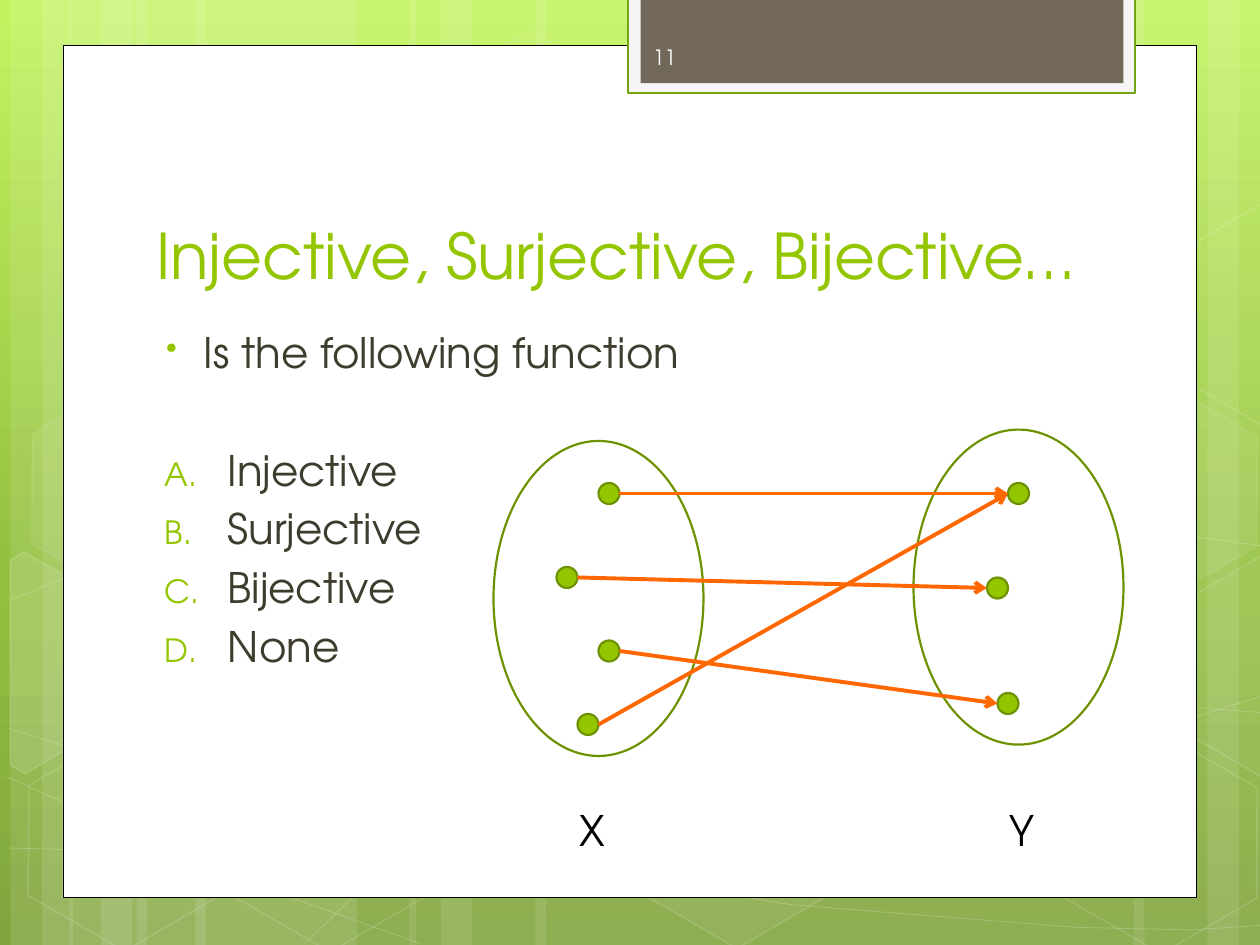
from copy import deepcopy
from dataclasses import dataclass

from pptx import Presentation
from pptx.dml.color import RGBColor
from pptx.enum.shapes import MSO_CONNECTOR as Connector, MSO_SHAPE as Shape
from pptx.enum.text import MSO_ANCHOR as Anchor, PP_ALIGN as Align
from pptx.oxml.ns import qn
from pptx.oxml.xmlchemy import OxmlElement as new_element
from pptx.util import Pt


@dataclass(frozen=True)
class Theme:
    """Colours, font and type sizes."""
    font: str = "TeX Gyre Adventor"
    green: str = "94C600"
    outline: str = "6D9200"
    orange: str = "FF6700"
    white: str = "FFFFFF"
    black: str = "000000"
    ink: str = "3E3D2D"
    tab: str = "71685A"
    tab_edge: str = "F5F5F5"
    tab_line: str = "74A510"
    number: str = "FEFEFE"
    backdrop: tuple = ((0, "C3F35F"), (0.62, "93BF3F"), (1, "81A53E"))
    title_size: int = 36
    body_size: int = 24
    number_size: int = 12


THEME = Theme()
DOT = 12
STRIPES = [(78, 126), (6, 36), (24, 60), (111.6, 126), (39.6, 36), (57.6, 60),
           (528, 126), (690, 36), (648, 60), (306, 222), (234, 36), (252, 60)]
WAVES = [
    [(5, 484.6), (136.8, 488.2), (329.8, 478.8), (570.2, 444.2), (725, 396.7)],
    [(5, 343.4), (87.1, 310.3), (249.8, 278.6), (470.9, 278.6), (725, 312.5)],
    [(4.3, 444.2), (131.6, 500.6), (240.5, 539.3)],
    [(5, 416.2), (92.2, 443.5), (257, 484.6), (452.2, 517), (614.2, 529.9), (680.4, 531.4), (725, 528.5)],
    [(174.2, 539.3), (217.4, 497.5), (279.4, 460.1), (338.4, 438.5), (437.8, 416.2),
     (489.6, 409.7), (571.7, 404.6), (686.2, 404.6), (724.3, 407.5)],
]
HEXAGONS = [(240.5, 26, 4, 8), (358, 424, 6, 12), (8, 425.5, None, 12), (10, 224.5, 7, 8),
            (125.5, 426, None, 12), (600.5, 427, None, 12), (600.5, 226, 7, 8)]
LEFT_CUT = [(5.8, 320.4), (13.7, 315.4), (69.1, 347), (68.4, 410.4), (14.4, 442.1), (5.8, 437)]
RIGHT_CUT = [(666.7, 349.2), (720.7, 317.5), (726.5, 321.1), (726.5, 441.4), (721.4, 444.2), (666.7, 412.6)]
DOMAIN = [(342, 276), (318, 324), (342, 366), (330, 408)]
CODOMAIN = [(576, 276), (564, 330), (570, 396)]
MAPPING = [0, 1, 2, 0]


def add_child(parent, tag, **attributes):
    """Append a DrawingML element with the given attributes."""
    child = new_element(tag)
    for name, value in attributes.items():
        child.set(name, str(value))
    parent.append(child)
    return child


def style(shape, fill=None, fill_alpha=None, line=None, weight=1.25, line_alpha=None):
    """Set fill, outline and their opacity in percent."""
    shape.shadow.inherit = False
    properties = shape._element.spPr
    for paint, colour in ((shape.fill, fill), (shape.line.fill, line)):
        if colour:
            paint.solid()
            paint.fore_color.rgb = RGBColor.from_string(colour)
        else:
            paint.background()
    if line:
        shape.line.width = Pt(weight)
    for owner, alpha in ((properties, fill_alpha), (properties.find(qn("a:ln")), line_alpha)):
        if alpha:
            add_child(owner.find(qn("a:solidFill"))[0], "a:alpha", val=alpha * 1000)


def draw(page, kind, left, top, width, height, **look):
    """Add a styled preset shape."""
    shape = page.shapes.add_shape(kind, Pt(left), Pt(top), Pt(width), Pt(height))
    style(shape, **look)
    return shape


def outline(page, points, close, **look):
    """Add a styled freeform through the points."""
    start, *rest = [(Pt(x), Pt(y)) for x, y in points]
    builder = page.shapes.build_freeform(*start, scale=1.0)
    builder.add_line_segments(rest, close=close)
    style(builder.convert_to_shape(), **look)


def write(para, text, size=THEME.body_size, colour=THEME.ink, before=0, bullet=None, indent=0, hang=0):
    """Write formatted text, with an optional bullet or lettering."""
    span = para.add_run()
    span.text = text
    span.font.name = THEME.font
    span.font.size = Pt(size)
    span.font.color.rgb = RGBColor.from_string(colour)
    para.alignment = Align.LEFT
    para.space_before = Pt(before)
    if bullet:
        properties = para._p.get_or_add_pPr()
        properties.set("marL", str(Pt(indent)))
        properties.set("indent", str(Pt(-hang)))
        add_child(add_child(properties, "a:buClr"), "a:srgbClr", val=THEME.green)
        add_child(properties, "a:buSzPct", val=76000)
        if bullet == "letters":
            add_child(properties, "a:buAutoNum", type="alphaUcPeriod")
        else:
            add_child(properties, "a:buChar", char=bullet)


def text_box(page, left, top, width, height, anchor=Anchor.TOP):
    """Add a wrapping text box and return its frame."""
    frame = page.shapes.add_textbox(Pt(left), Pt(top), Pt(width), Pt(height)).text_frame
    frame.word_wrap = True
    frame.vertical_anchor = anchor
    return frame


def arrow(page, start, end):
    """Link the right of one dot to the left of another."""
    points = (start[0] + DOT, start[1] + DOT / 2, end[0], end[1] + DOT / 2)
    link = page.shapes.add_connector(Connector.STRAIGHT, *map(Pt, points))
    link.line.color.rgb = RGBColor.from_string(THEME.orange)
    link.line.width = Pt(2.25)
    properties = link._element.spPr
    add_child(properties.find(qn("a:ln")), "a:tailEnd", type="arrow")
    add_child(properties, "a:effectLst")


def backdrop(page):
    """Paint the gradient, stripes, waves and hexagons."""
    fill = page.background.fill
    fill.gradient()
    fill.gradient_angle = 270
    stops = page._element.find(".//" + qn("a:gsLst"))
    stops.insert(1, deepcopy(stops[0]))
    for stop, (position, colour) in zip(fill.gradient_stops, THEME.backdrop):
        stop.position = position
        stop.color.rgb = RGBColor.from_string(colour)
    for left, width in STRIPES:
        draw(page, Shape.RECTANGLE, left, 0, width, 540, fill=THEME.white, fill_alpha=10)
    for points in WAVES:
        outline(page, points, False, line=THEME.white, weight=0.5, line_alpha=20)
    for left, top, alpha, line_alpha in HEXAGONS:
        hexagon = draw(page, Shape.HEXAGON, left, top, 126, 109.5, fill=alpha and THEME.white,
                       fill_alpha=alpha, line=THEME.white, weight=1, line_alpha=line_alpha)
        hexagon.adjustments[0] = 0.285
        hexagon.rotation = 30
    upper_cut = [(x, y - 201) for x, y in RIGHT_CUT]
    for points, alpha in ((LEFT_CUT, 10), (RIGHT_CUT, 4), (upper_cut, None)):
        outline(page, points, True, fill=alpha and THEME.white, fill_alpha=alpha,
                line=THEME.white, weight=1, line_alpha=12)


def panel(page):
    """Draw the white sheet and its numbered tab."""
    draw(page, Shape.RECTANGLE, 36, 26, 648, 487, fill=THEME.white, line=THEME.black, weight=0.5)
    draw(page, Shape.RECTANGLE, 359, -1.5, 289.5, 54.5, fill=THEME.tab_edge, line=THEME.tab_line)
    draw(page, Shape.RECTANGLE, 366, -1.5, 276, 49, fill=THEME.tab)
    number = text_box(page, 366, 18, 105, 28.8, Anchor.MIDDLE)
    write(number.paragraphs[0], "11", size=THEME.number_size, colour=THEME.number)


def heading(page, text):
    """Place the title in front of the sheet."""
    title = page.shapes.title
    title._element.getparent().append(title._element)
    title.left, title.top, title.width, title.height = map(Pt, (82, 80.6, 553, 90))
    title.text_frame.vertical_anchor = Anchor.BOTTOM
    write(title.text_frame.paragraphs[0], text, size=THEME.title_size, colour=THEME.green)


def question(page):
    """Write the question and its lettered answers."""
    frame = text_box(page, 82, 183, 533.5, 291)
    write(frame.paragraphs[0], "Is the following function", before=4.8, bullet="•", indent=27.4, hang=21.6)
    for index, answer in enumerate(("Injective", "Surjective", "Bijective", "None")):
        write(frame.add_paragraph(), answer, before=4.8 if index else 38.5,
              bullet="letters", indent=41, hang=36)


def diagram(page):
    """Draw both sets, their elements and the mapping."""
    for left, top, label_left, label in ((282, 252, 324, "X"), (522, 245.5, 570, "Y")):
        draw(page, Shape.OVAL, left, top, 120, 180, line=THEME.outline)
        write(text_box(page, label_left, 456, 30, 36).paragraphs[0], label, colour=THEME.black)
    for left, top in DOMAIN + CODOMAIN:
        draw(page, Shape.OVAL, left, top, DOT, DOT, fill=THEME.green, line=THEME.outline)
    for start, target in zip(DOMAIN, MAPPING):
        arrow(page, start, CODOMAIN[target])


def main():
    """Build and save the slide."""
    deck = Presentation()
    deck.slide_width, deck.slide_height = Pt(720), Pt(540)
    page = deck.slides.add_slide(deck.slide_layouts[5])
    backdrop(page)
    panel(page)
    heading(page, "Injective, Surjective, Bijective…")
    question(page)
    diagram(page)
    deck.save("out.pptx")


if __name__ == "__main__":
    main()
